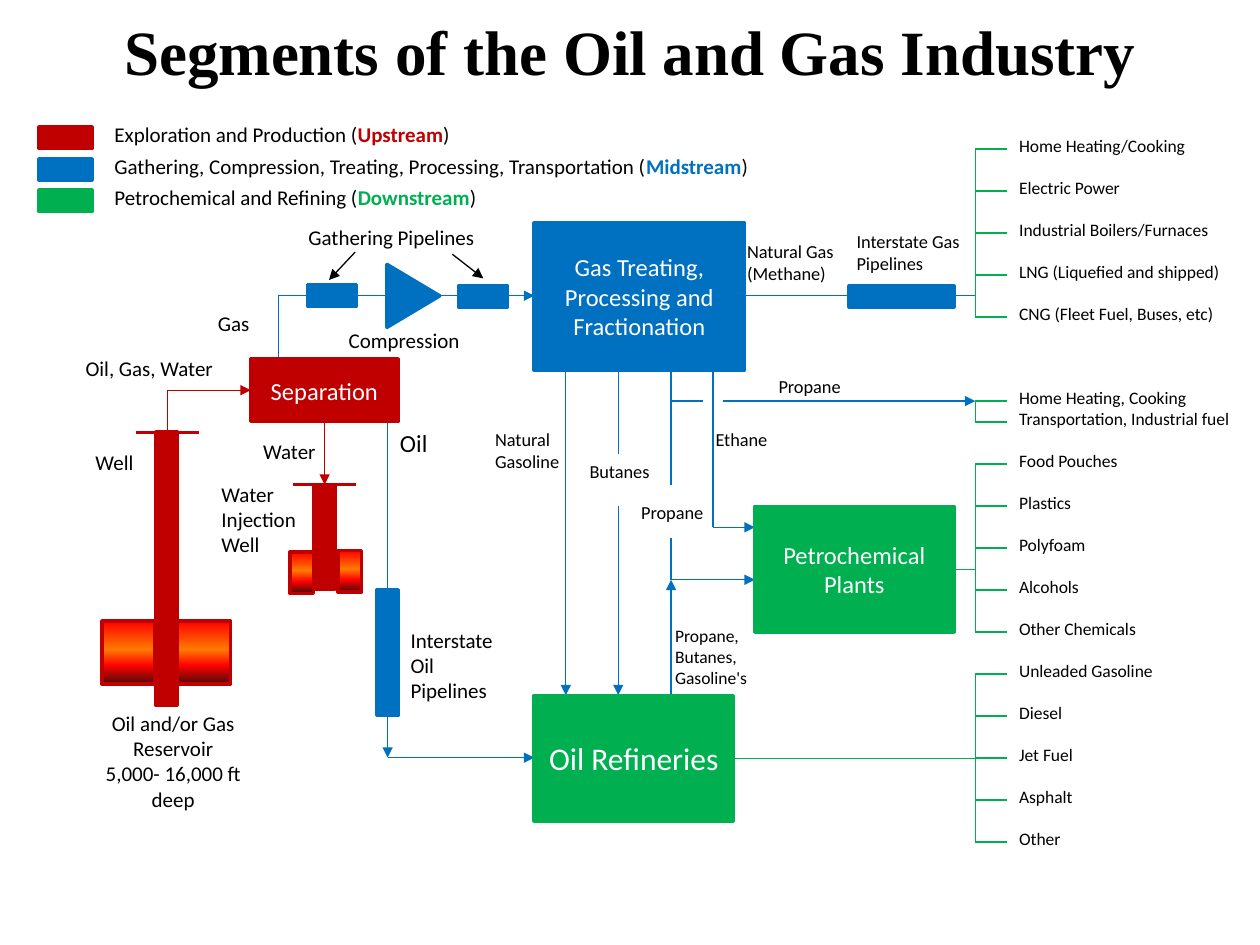
from dataclasses import dataclass

from lxml import etree
from pptx import Presentation
from pptx.dml.color import RGBColor
from pptx.enum import shapes, text
from pptx.oxml import ns
from pptx.util import Pt


@dataclass
class Theme:
    red: str = "C00000"
    blue: str = "0070C0"
    green: str = "00B050"
    black: str = "000000"
    white: str = "FFFFFF"
    glow: tuple = ((0, "FF0000"), (45, "FF7A00"), (70, "FF0300"), (100, "4D0808"))
    font: str = "Calibri"
    title_font: str = "Times New Roman"
    title: float = 36
    large: float = 18
    block: float = 14
    body: float = 12
    small: float = 10.5
    outlet: float = 10


theme = Theme()
RED, BLUE, GREEN, BLACK = theme.red, theme.blue, theme.green, theme.black
CENTER, LEFT = text.PP_ALIGN.CENTER, text.PP_ALIGN.LEFT

deck = Presentation()
deck.slide_width, deck.slide_height = Pt(720), Pt(540)
page = deck.slides.add_slide(deck.slide_layouts[6])


def write(box, lines, size, color=BLACK, align=LEFT, **extra):
    """Fill a box; each line is a string or a list of (string, format) spans."""
    for number, line in enumerate(lines):
        frame = box.text_frame
        para = frame.add_paragraph() if number else frame.paragraphs[0]
        para.alignment = align
        for words, changes in [(line, {})] if isinstance(line, str) else line:
            span = para.add_run()
            span.text = words
            look = {"name": theme.font, "size": Pt(size), "bold": False,
                    "color": color, **extra, **changes}
            span.font.color.rgb = RGBColor.from_string(look.pop("color"))
            for name, value in look.items():
                setattr(span.font, name, value)


def label(lines, x, y, width, height, size, wrap=False, align=LEFT):
    box = page.shapes.add_textbox(Pt(x), Pt(y), Pt(width), Pt(height))
    settings = {"word_wrap": wrap, "auto_size": text.MSO_AUTO_SIZE.SHAPE_TO_FIT_TEXT}
    for name, value in settings.items():
        setattr(box.text_frame, name, value)
    write(box, lines, size, align=align)


# Lines: colour, x1, y1, x2, y2, arrow at the end, width
thin = 0.75
lines = [
    # Wells and separation
    (RED, 77.8, 247, 113.8, 247, False, 1.5),
    (RED, 95.8, 247, 95.8, 223, False, thin),
    (RED, 95.8, 223, 143.3, 223, True, thin),
    (RED, 185.5, 241, 185.5, 277, True, thin),
    (RED, 167.5, 277, 203.5, 277, False, 1.5),
    # Oil and gas gathering
    (BLUE, 221.5, 241, 221.5, 433, True, thin),
    (BLUE, 221.5, 433, 305.3, 433, True, thin),
    (BLUE, 159, 204.5, 159, 169, False, thin),
    (BLUE, 158.8, 169, 221.5, 169, False, thin),
    (BLUE, 251.3, 169, 305.3, 169, True, thin),
    (BLUE, 425.5, 169, 557.3, 169, False, thin),
    (BLACK, 203, 144, 188, 160, True, thin),
    (BLACK, 258.5, 145.3, 276.2, 159.1, True, thin),
    # Fractionation products
    (BLUE, 323.3, 211.3, 323.3, 397.3, True, thin),
    (BLUE, 353.3, 211.3, 353.3, 259.3, False, thin),
    (BLUE, 353.3, 289.3, 353.3, 397.3, True, thin),
    (BLUE, 383.5, 211.3, 383.5, 277.3, False, thin),
    (BLUE, 383.5, 307.3, 383.5, 331.3, False, thin),
    (BLUE, 383.5, 397.3, 383.5, 331.3, True, thin),
    (BLUE, 383.5, 331.3, 431.3, 331.3, True, thin),
    (BLUE, 407.5, 211.3, 407.5, 301.3, False, thin),
    (BLUE, 407.5, 301.3, 431.3, 301.3, True, thin),
    (BLUE, 383.5, 229.2, 401.5, 229.2, False, thin),
    (BLUE, 413.3, 229.2, 557.3, 229.2, True, thin),
    # Feeds to the outlets
    (GREEN, 545.5, 325.3, 557.3, 325.3, False, thin),
    (GREEN, 419.5, 433.3, 557.3, 433.3, False, thin),
]

# Outlet brackets: first tick, gap, then each name with its box width
TRUNK, TICK_END = 557.3, 575.3
outlets = [
    (85.2, 24, [("Home Heating/Cooking", 118), ("Electric Power", 79),
                ("Industrial Boilers/Furnaces", 134),
                ("LNG (Liquefied and shipped)", 142.5),
                ("CNG (Fleet Fuel, Buses, etc)", 144)]),
    (229.2, 12, [("Home Heating, Cooking", 121),
                 ("Transportation, Industrial fuel", 144.7)]),
    (265.2, 24, [("Food Pouches", 75), ("Plastics", 49), ("Polyfoam", 60.5),
                 ("Alcohols", 52.5), ("Other Chemicals", 89.3)]),
    (385.2, 24, [("Unleaded Gasoline", 100), ("Diesel", 42.5), ("Jet Fuel", 50.4),
                 ("Asphalt", 48.2), ("Other", 39.6)]),
]
for top, gap, names in outlets:
    lines.append((GREEN, TRUNK, top, TRUNK, top + gap * (len(names) - 1), False, thin))
    for row, (name, width) in enumerate(names):
        tick = top + gap * row
        lines.append((GREEN, TRUNK, tick, TICK_END, tick, False, thin))
        label([name], TICK_END, tick - 11.8, width, 19.4, theme.outlet)

for color, x1, y1, x2, y2, arrow, width in lines:
    link = page.shapes.add_connector(
        shapes.MSO_CONNECTOR.STRAIGHT, Pt(x1), Pt(y1), Pt(x2), Pt(y2))
    link.line.color.rgb = RGBColor.from_string(color)
    link.line.width = Pt(width)
    if arrow:
        etree.SubElement(link.line._get_or_add_ln(), ns.qn("a:tailEnd"), type="triangle")
    etree.SubElement(link._element.spPr, ns.qn("a:effectLst"))

# Blocks: colour, x, y, width, height, text lines, text size
blocks = [
    (RED, 89.3, 247, 12.2, 156.2, [], 0),
    (RED, 179.3, 277, 12.2, 59.8, [], 0),
    (RED, 143.3, 205, 84.2, 36, ["Separation"], theme.block),
    (BLUE, 305.3, 127.4, 120.2, 84.2,
     ["Gas Treating, Processing and Fractionation"], theme.block),
    (GREEN, 431.3, 289.4, 113.8, 72, ["Petrochemical", "Plants"], theme.block),
    (GREEN, 305.3, 397.4, 113.8, 72, ["Oil Refineries"], theme.large),
    (BLUE, 215.3, 337, 12.2, 72, [], 0),
    (BLUE, 485.3, 163.4, 59.8, 12.2, [], 0),
    (BLUE, 262, 163.4, 28, 12.2, [], 0),
    (BLUE, 175.7, 162.7, 28, 12.2, [], 0),
    (BLUE, 218.2, 154, 36, 30.2, "compressor", 0),
    (theme.glow, 58.3, 355, 30.2, 36, [], 0),
    (theme.glow, 101.5, 355, 30.2, 36, [], 0),
    (theme.glow, 165.6, 315.4, 13.7, 23.8, [], 0),
    (theme.glow, 193, 314.6, 13.7, 23.8, [], 0),
]

# Legend
legend = [
    (RED, "Exploration and Production (", "Upstream", 226.8),
    (BLUE, "Gathering, Compression, Treating, Processing, Transportation (",
     "Midstream", 418.3),
    (GREEN, "Petrochemical and Refining (", "Downstream", 246.2),
]
for row, (color, activity, segment, width) in enumerate(legend):
    blocks.append((color, 22.3, 72.7 + 18 * row, 30.2, 12.2, [], 0))
    spans = [(activity, {}), (segment, {"color": color, "bold": True}), (")", {})]
    label([spans], 58.3, 66.2 + 18 * row, width, 21.6, theme.body)

for color, x, y, width, height, words, size in blocks:
    compressor = words == "compressor"
    kind = shapes.MSO_SHAPE.ISOSCELES_TRIANGLE if compressor else shapes.MSO_SHAPE.RECTANGLE
    shape = page.shapes.add_shape(kind, Pt(x), Pt(y), Pt(width), Pt(height))
    shape.shadow.inherit = False
    shape.rotation = 90 if compressor else 0
    shape.line.width = Pt(2)
    if color == theme.glow:
        shape.line.color.rgb = RGBColor.from_string(RED)
        shape.fill.gradient()
        shape.fill.gradient_angle = 270
        stops = shape._element.spPr.find(".//" + ns.qn("a:gsLst"))
        for stop in list(stops):
            stops.remove(stop)
        for percent, shade in color:
            stop = etree.SubElement(stops, ns.qn("a:gs"), pos=str(percent * 1000))
            etree.SubElement(stop, ns.qn("a:srgbClr"), val=shade)
    else:
        shape.line.color.rgb = RGBColor.from_string(color)
        shape.fill.solid()
        shape.fill.fore_color.rgb = RGBColor.from_string(color)
    if words and not compressor:
        shape.text_frame.vertical_anchor = text.MSO_ANCHOR.MIDDLE
        write(shape, words, size, theme.white, CENTER)

# Flow labels
for entry in [
    (["Oil, Gas, Water"], 41.8, 199.4, 97.2, 21.6, theme.body),
    (["Oil and/or Gas Reservoir", "5,000- 16,000 ft deep"],
     40.3, 402.5, 117.4, 51, theme.body, True, CENTER),
    (["Well"], 47.5, 253.4, 38.2, 21.6, theme.body),
    (["Compression"], 192.2, 183.6, 85.7, 21.6, theme.body),
    (["Water", "Injection", "Well"], 119.5, 271.4, 59.8, 51, theme.body),
    (["Gas"], 117.4, 174.2, 36.7, 21.6, theme.body),
    (["Oil"], 221.5, 241.2, 31.7, 24.5, theme.block),
    (["Water"], 143.3, 247, 46, 21.6, theme.body),
    (["Gathering Pipelines"], 169.2, 124.6, 119.5, 21.6, theme.body),
    (["Interstate", "Oil", "Pipelines"], 227.5, 355, 73.4, 51, theme.body, True),
    (["Natural Gas", "(Methane)"], 419.8, 133.9, 71.3, 32.4, theme.small),
    (["Interstate Gas", "Pipelines"], 482.4, 128.2, 81.4, 32.4, theme.small),
    (["Ethane"], 401.8, 241.2, 48.2, 20.2, theme.small),
    (["Propane"], 437.8, 211, 54.7, 20.2, theme.small),
    (["Propane"], 359.3, 283, 54.7, 20.2, theme.small),
    (["Butanes"], 329.8, 259.2, 53.3, 20.2, theme.small),
    (["Natural", "Gasoline"], 275.8, 241.2, 56.9, 32.4, theme.small),
    (["Propane,", "Butanes,", "Gasoline's"], 378.7, 353.5, 61.2, 43.9, theme.outlet),
]:
    label(*entry)

# Title
title = page.shapes.add_textbox(Pt(36), Pt(0), Pt(648), Pt(57))
title.text_frame.word_wrap = True
title.text_frame.vertical_anchor = text.MSO_ANCHOR.MIDDLE
write(title, ["Segments of the Oil and Gas Industry"], theme.title,
      align=CENTER, name=theme.title_font, bold=True)

deck.save("out.pptx")
